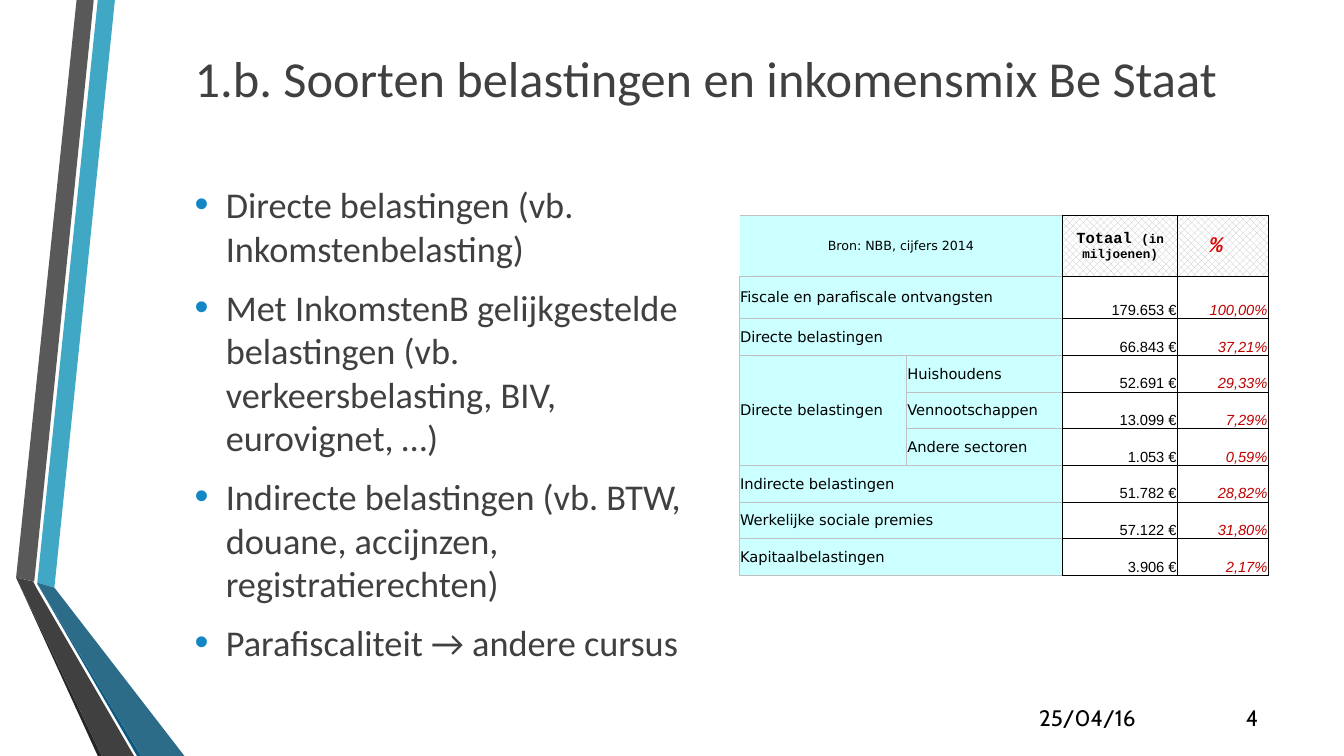
from typing import NamedTuple, Optional

from lxml import etree
from pptx import Presentation
from pptx.dml.color import RGBColor
from pptx.enum.dml import MSO_PATTERN
from pptx.enum.text import MSO_ANCHOR, MSO_AUTO_SIZE, PP_ALIGN
from pptx.oxml.ns import qn
from pptx.util import Inches, Pt

LEFT, CENTER, RIGHT = PP_ALIGN.LEFT, PP_ALIGN.CENTER, PP_ALIGN.RIGHT
MIDDLE, BOTTOM = MSO_ANCHOR.MIDDLE, MSO_ANCHOR.BOTTOM
HATCH = MSO_PATTERN.PERCENT_50

COLORS = {
    "text": "404040", "black": "000000", "white": "FFFFFF", "silver": "C0C0C0",
    "bullet": "1287C3", "label": "CCFFFF", "percent": "C00000", "percent_head": "DD0806",
    "sky": "40A8C5", "gray": "595959", "shadow": "262626", "navy": "0C5A82",
    "steel": "2D6C88", "charcoal": "404040",
}


class Ribbon(NamedTuple):
    color: str
    points: list[tuple[float, float]]


class Span(NamedTuple):
    text: str
    size: float
    font: str
    color: str = "black"
    bold: bool = False
    italic: bool = False


class Footer(NamedTuple):
    left: float
    width: float
    text: str
    align: PP_ALIGN


class TaxRow(NamedTuple):
    group: Optional[str]
    sector: Optional[str]
    total: str
    percent: str


RIBBONS = [
    Ribbon("sky", [(0.37, 5.78), (0.54, 5.83), (1.14, 0), (0.97, 0)]),
    Ribbon("gray", [(0.93, 0), (0.76, 0), (0.16, 5.73), (0.34, 5.77)]),
    Ribbon("shadow", [(0.16, 5.73), (0.97, 7.5), (1.01, 7.5)]),
    Ribbon("navy", [(0.37, 5.79), (1.36, 7.5), (1.4, 7.5)]),
    Ribbon("steel", [(0.37, 5.79), (1.4, 7.5), (1.83, 7.5), (0.54, 5.83), (0.37, 5.78)]),
    Ribbon("charcoal", [(1.33, 7.5), (0.36, 5.83), (0.33, 5.77), (0.16, 5.73), (1.01, 7.5)]),
]
BULLETS = [
    "Directe belastingen (vb. Inkomstenbelasting)",
    "Met InkomstenB gelijkgestelde belastingen (vb. verkeersbelasting, BIV, eurovignet, …)",
    "Indirecte belastingen (vb. BTW, douane, accijnzen, registratierechten)",
    "Parafiscaliteit → andere cursus",
]
FOOTERS = [Footer(10.16, 1.25, "25/04/16", CENTER), Footer(11.98, 0.6, "4", RIGHT)]
TAX_ROWS = [
    TaxRow("Fiscale en parafiscale ontvangsten", None, "179.653 €", "100,00%"),
    TaxRow("Directe belastingen", None, "66.843 €", "37,21%"),
    TaxRow("Directe belastingen", "Huishoudens", "52.691 €", "29,33%"),
    TaxRow(None, "Vennootschappen", "13.099 €", "7,29%"),
    TaxRow(None, "Andere sectoren", "1.053 €", "0,59%"),
    TaxRow("Indirecte belastingen", None, "51.782 €", "28,82%"),
    TaxRow("Werkelijke sociale premies", None, "57.122 €", "31,80%"),
    TaxRow("Kapitaalbelastingen", None, "3.906 €", "2,17%"),
]
COLUMN_WIDTHS = [1.66, 1.55, 1.14, 0.9]
ROW_HEIGHTS = [0.6, 0.42] + [(3.57 - 0.6 - 0.42) / 7] * 7


def rgb(name: str) -> RGBColor:
    return RGBColor.from_string(COLORS[name])


def add_spans(para, spans: list[Span]) -> None:
    for span in spans:
        run = para.add_run()
        run.text = span.text
        font = run.font
        font.size, font.name = Pt(span.size), span.font
        font.bold, font.italic = span.bold, span.italic
        font.color.rgb = rgb(span.color)


def place(shape, left: float, top: float, width: float, height: float) -> None:
    shape.left, shape.top = Inches(left), Inches(top)
    shape.width, shape.height = Inches(width), Inches(height)


def add_ribbon(page, ribbon: Ribbon) -> None:
    start, *rest = [(Inches(x), Inches(y)) for x, y in ribbon.points]
    builder = page.shapes.build_freeform(*start)
    builder.add_line_segments(rest, close=True)
    shape = builder.convert_to_shape()
    shape.shadow.inherit = False
    shape.fill.solid()
    shape.fill.fore_color.rgb = rgb(ribbon.color)
    shape.line.fill.background()


def fill_title(title) -> None:
    place(title, 1.83, 0.39, 10.75, 0.75)
    frame = title.text_frame
    frame.auto_size, frame.vertical_anchor = MSO_AUTO_SIZE.NONE, MIDDLE
    para = frame.paragraphs[0]
    para.alignment = LEFT
    add_spans(para, [Span("1.b. Soorten belastingen en inkomensmix Be Staat", 36, "Calibri", "text")])


def add_bullet(para) -> None:
    properties = para._p.get_or_add_pPr()
    properties.set("marL", str(Inches(0.31)))
    properties.set("indent", str(-Inches(0.31)))
    color = etree.SubElement(properties, qn("a:buClr"))
    etree.SubElement(color, qn("a:srgbClr"), val=COLORS["bullet"])
    etree.SubElement(properties, qn("a:buSzPct"), val="110000")
    etree.SubElement(properties, qn("a:buFont"), typeface="Arial")
    etree.SubElement(properties, qn("a:buChar"), char="•")


def fill_body(body) -> None:
    place(body, 1.83, 1.76, 5.28, 4.54)
    frame = body.text_frame
    frame.auto_size = MSO_AUTO_SIZE.NONE
    for index, text in enumerate(BULLETS):
        para = frame.add_paragraph() if index else frame.paragraphs[0]
        add_bullet(para)
        para.space_before, para.space_after = Pt(5 if index else 0), Pt(6)
        add_spans(para, [Span(text, 25.9, "Calibri", "text")])


def add_footer(page, footer: Footer) -> None:
    box = page.shapes.add_textbox(Inches(footer.left), Inches(6.9), Inches(footer.width), Inches(0.4))
    frame = box.text_frame
    frame.word_wrap, frame.vertical_anchor = True, BOTTOM
    para = frame.paragraphs[0]
    para.alignment = footer.align
    add_spans(para, [Span(footer.text, 16, "Cabin")])


def format_cell(cell, row: int, column: int) -> None:
    """Set the margins, borders and fill that follow from the cell's place."""
    cell.margin_left = cell.margin_top = cell.margin_right = Inches(0.01)
    cell.margin_bottom = 0
    is_label = column < 2
    properties = cell._tc.get_or_add_tcPr()
    for side in ("lnL", "lnR", "lnT", "lnB"):
        if side == "lnL" and row == 0 and is_label:
            continue
        meets_numbers = side == "lnR" and (column == 1 or cell.is_merge_origin and cell.span_width == 2)
        name = "silver" if is_label and not meets_numbers else "black"
        line = etree.SubElement(properties, qn(f"a:{side}"), w=str(Pt(0.5)))
        solid = etree.SubElement(line, qn("a:solidFill"))
        etree.SubElement(solid, qn("a:srgbClr"), val=COLORS[name])
    if row == 0 and not is_label:
        cell.fill.patterned()
        cell.fill.pattern = HATCH
        cell.fill.fore_color.rgb, cell.fill.back_color.rgb = rgb("silver"), rgb("white")
    else:
        cell.fill.solid()
        cell.fill.fore_color.rgb = rgb("label" if is_label else "white")


def write_cell(cell, spans: list[Span], align: PP_ALIGN, anchor: MSO_ANCHOR) -> None:
    cell.vertical_anchor = anchor
    para = cell.text_frame.paragraphs[0]
    para.alignment = align
    add_spans(para, spans)


def add_tax_table(page) -> None:
    table = page.shapes.add_table(len(ROW_HEIGHTS), len(COLUMN_WIDTHS), Inches(7.33),
                                  Inches(2.14), Inches(5.25), Inches(3.57)).table
    table.first_row = table.horz_banding = False
    for column, width in zip(table.columns, COLUMN_WIDTHS):
        column.width = Inches(width)
    for row, height in zip(table.rows, ROW_HEIGHTS):
        row.height = Inches(height)
    table.cell(0, 0).merge(table.cell(0, 1))
    table.cell(3, 0).merge(table.cell(5, 0))
    for index, tax in enumerate(TAX_ROWS, 1):
        if tax.sector is None:
            table.cell(index, 0).merge(table.cell(index, 1))
    for row in range(len(ROW_HEIGHTS)):
        for column in range(len(COLUMN_WIDTHS)):
            format_cell(table.cell(row, column), row, column)
    headings = {
        0: [Span("Bron: NBB, cijfers 2014", 9, "DejaVu Sans")],
        2: [Span("Totaal ", 11, "Courier New", bold=True),
            Span("(in miljoenen)", 9, "Courier New", bold=True)],
        3: [Span("% ", 16, "Courier New", "percent_head", True, True)],
    }
    for column, spans in headings.items():
        write_cell(table.cell(0, column), spans, CENTER, MIDDLE)
    for index, tax in enumerate(TAX_ROWS, 1):
        for column, label in enumerate((tax.group, tax.sector)):
            if label:
                write_cell(table.cell(index, column), [Span(label, 10.5, "DejaVu Sans")], LEFT, MIDDLE)
        write_cell(table.cell(index, 2), [Span(tax.total, 10.5, "Arial")], RIGHT, BOTTOM)
        percent = Span(tax.percent, 10.5, "Arial", "percent", italic=True)
        write_cell(table.cell(index, 3), [percent], RIGHT, BOTTOM)


def main() -> None:
    deck = Presentation()
    deck.slide_width, deck.slide_height = Inches(13.33), Inches(7.5)
    page = deck.slides.add_slide(deck.slide_layouts[1])
    for ribbon in RIBBONS:
        add_ribbon(page, ribbon)
    fill_title(page.shapes.title)
    for footer in FOOTERS:
        add_footer(page, footer)
    add_tax_table(page)
    fill_body(page.placeholders[1])
    deck.save("out.pptx")


if __name__ == "__main__":
    main()
